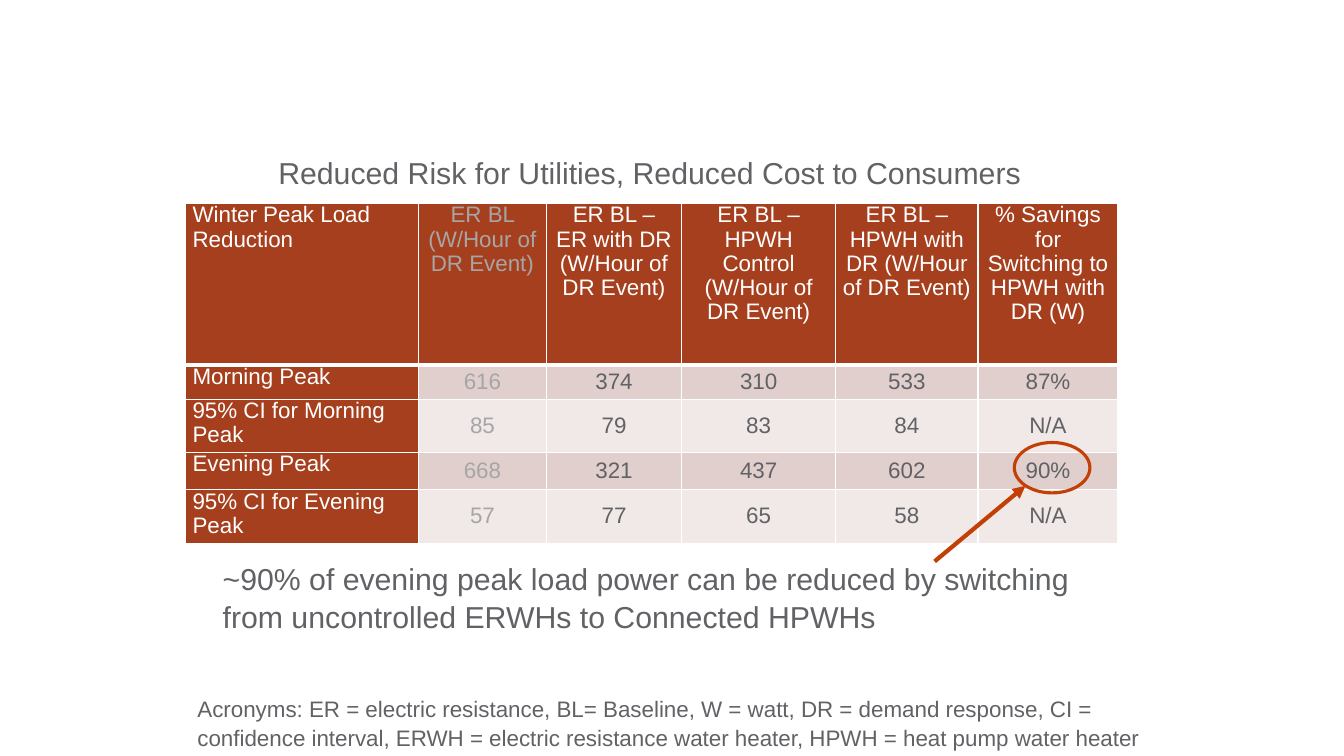
from lxml.etree import SubElement as Sub
from pptx import Presentation
from pptx.dml.color import RGBColor
from pptx.enum.shapes import MSO_CONNECTOR as Link, MSO_SHAPE as Shape
from pptx.enum.text import MSO_ANCHOR as Anchor, MSO_AUTO_SIZE as Fit, PP_ALIGN as Align
from pptx.oxml import parse_xml
from pptx.oxml.ns import nsdecls, qn
from pptx.util import Inches, Pt

GREY, PALE, WHITE = "616265", "A6A6A6", "FFFFFF"
RUST, ORANGE = "A63F1E", "C24006"
BANDS = ["E1CFCD", "F1E8E8"]
WIDTHS = [2.31, 1.27, 1.34, 1.53, 1.41, 1.39]
HEIGHTS = [1.6, 0.34, 0.53, 0.37, 0.53]
ROWS = [
    ["Winter Peak Load Reduction", "ER BL (W/Hour of DR Event)",
     "ER BL –\nER with DR (W/Hour of DR Event)",
     "ER BL – HPWH Control (W/Hour of DR Event)",
     "ER BL –\nHPWH with DR (W/Hour of DR Event)",
     "% Savings for Switching to HPWH with DR (W)"],
    ["Morning Peak", "616", "374", "310", "533", "87%"],
    ["95% CI for Morning Peak", "85", "79", "83", "84", "N/A"],
    ["Evening Peak", "668", "321", "437", "602", "90%"],
    ["95% CI for Evening Peak", "57", "77", "65", "58", "N/A"],
]
TITLE = "Reduced Risk for Utilities, Reduced Cost to Consumers"
CLAIM = ("~90% of evening peak load power can be reduced by switching "
         "from uncontrolled ERWHs to Connected HPWHs")
TERMS = ("Acronyms: ER = electric resistance, BL= Baseline, W = watt, "
         "DR = demand response, CI = confidence interval, "
         "ERWH = electric resistance water heater, HPWH = heat pump water heater")


def color(code):
    return RGBColor.from_string(code)


def style(para, size, code, align, space):
    para.alignment = align
    para.line_spacing = space
    font = para.font
    font.name, font.size, font.bold = "Arial", Pt(size), False
    font.color.rgb = color(code)


def write(shape, text, size, space=1.07):
    frame = shape.text_frame
    frame.word_wrap = True
    frame.auto_size = Fit.NONE
    frame.vertical_anchor = Anchor.TOP
    frame.text = text
    style(frame.paragraphs[0], size, GREY, Align.LEFT, space)


def add_title(slide, x, y, w, h):
    title = slide.shapes.title
    title.left, title.top = Inches(x), Inches(y)
    title.width, title.height = Inches(w), Inches(h)
    write(title, TITLE, 21.6, 1)


def add_note(slide, text, size, x, y, w, h):
    box = slide.shapes.add_textbox(Inches(x), Inches(y), Inches(w), Inches(h))
    write(box, text, size)


def add_edges(cell, top, base):
    props = cell._tc.get_or_add_tcPr()
    for i, (side, width) in enumerate(zip("LRTB", [1, 1, top, base])):
        props.insert(i, parse_xml(
            f'<a:ln{side} {nsdecls("a")} w="{Pt(width)}"><a:solidFill>'
            f'<a:srgbClr val="{WHITE}"/></a:solidFill></a:ln{side}>'))


def fill_cell(cell, text, row, col):
    label = row == 0 or col == 0
    cell.fill.solid()
    cell.fill.fore_color.rgb = color(RUST if label else BANDS[(row - 1) % 2])
    cell.margin_left = cell.margin_right = Inches(0.07)
    cell.margin_top = cell.margin_bottom = 0
    cell.vertical_anchor = Anchor.TOP if label else Anchor.MIDDLE
    cell.text = text
    ink = PALE if col == 1 else WHITE if label else GREY
    for para in cell.text_frame.paragraphs:
        style(para, 16, ink, Align.CENTER if col else Align.LEFT, 0.97)
    add_edges(cell, 3 if row == 1 else 1, 3 if row == 0 else 1)


def add_grid(slide, x, y):
    grid = slide.shapes.add_table(
        len(HEIGHTS), len(WIDTHS), Inches(x), Inches(y),
        Inches(sum(WIDTHS)), Inches(sum(HEIGHTS))).table
    grid.first_row = grid.horz_banding = False
    for col, width in zip(grid.columns, WIDTHS):
        col.width = Inches(width)
    for row, height in zip(grid.rows, HEIGHTS):
        row.height = Inches(height)
    for r, texts in enumerate(ROWS):
        for c, text in enumerate(texts):
            fill_cell(grid.cell(r, c), text, r, c)


def add_mark(slide, x, y, w, h):
    ring = slide.shapes.add_shape(
        Shape.OVAL, Inches(x), Inches(y), Inches(w), Inches(h))
    ring.shadow.inherit = False
    ring.fill.background()
    arrow = slide.shapes.add_connector(
        Link.STRAIGHT, Inches(x - 0.79), Inches(y + 1.18),
        Inches(x + 0.11), Inches(y + 0.43))
    for part, width in [(ring, 2.25), (arrow, 3)]:
        part.line.color.rgb = color(ORANGE)
        part.line.width = Pt(width)
    Sub(arrow.line._get_or_add_ln(), qn("a:tailEnd"), type="triangle")
    Sub(arrow._element.spPr, qn("a:effectLst"))


def main():
    deck = Presentation()
    deck.slide_width, deck.slide_height = Inches(13.33), Inches(7.5)
    slide = deck.slides.add_slide(deck.slide_layouts[5])
    add_title(slide, 2.66, 1.48, 8.59, 0.46)
    add_grid(slide, 1.84, 2.02)
    add_note(slide, CLAIM, 21.6, 2.11, 5.48, 8.98, 1.19)
    add_mark(slide, 10.06, 4.39, 0.75, 0.5)
    add_note(slide, TERMS, 16, 1.86, 6.83, 9.6, 0.64)
    deck.save("out.pptx")


if __name__ == "__main__":
    main()
